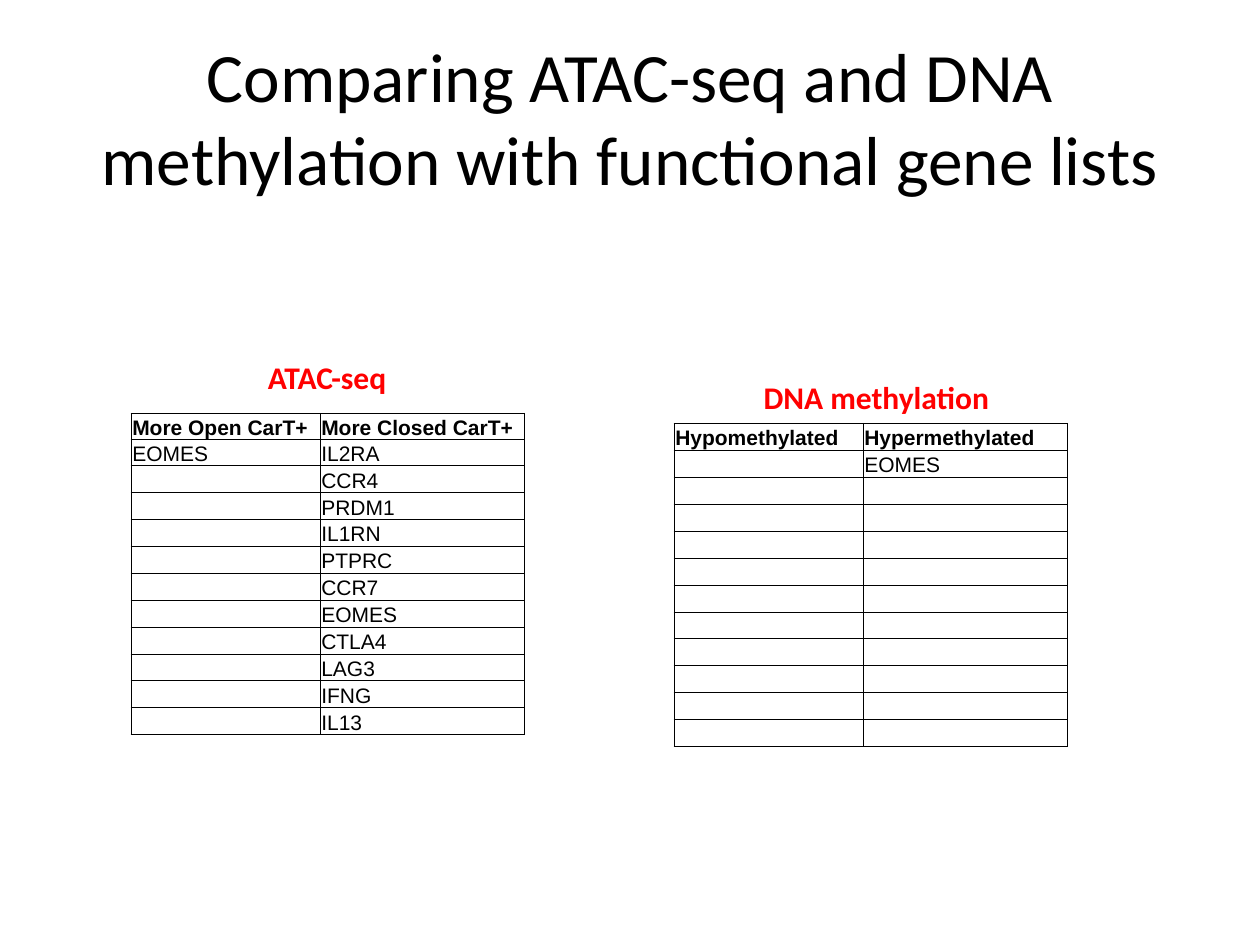
from itertools import zip_longest

from lxml import etree
from pptx import Presentation
from pptx import util as u
from pptx.dml.color import RGBColor
from pptx.enum import text
from pptx.oxml.ns import qn

BLACK, RED = "000000", "FF0000"
ROW_COUNT = 12
COLUMN_WIDTHS = (1.5, 1.62)
OPEN_GENES = ["EOMES"]
CLOSED_GENES = ["IL2RA", "CCR4", "PRDM1", "IL1RN", "PTPRC", "CCR7",
                "EOMES", "CTLA4", "LAG3", "IFNG", "IL13"]


def color(value):
    return RGBColor.from_string(value)


def place(shape, left, top, width, height):
    shape.left, shape.top = u.Inches(left), u.Inches(top)
    shape.width, shape.height = u.Inches(width), u.Inches(height)


def format_font(font, name, size, value, bold=False):
    font.name, font.size, font.bold = name, u.Pt(size), bold
    font.color.rgb = color(value)


def add_title(slide, words):
    title = slide.shapes.title
    place(title, 0.5, 0.3, 9, 1.25)
    frame = title.text_frame
    frame.text = words
    frame.word_wrap = True
    frame.vertical_anchor = text.MSO_ANCHOR.MIDDLE
    para = frame.paragraphs[0]
    para.alignment = text.PP_ALIGN.CENTER
    format_font(para.runs[0].font, "Calibri", 39.6, BLACK)


def add_label(slide, words, left, top, width):
    box = slide.shapes.add_textbox(0, 0, 0, 0)
    place(box, left, top, width, 0.4)
    frame = box.text_frame
    frame.text = words
    frame.word_wrap = True
    frame.auto_size = text.MSO_AUTO_SIZE.SHAPE_TO_FIT_TEXT
    para = frame.paragraphs[0]
    para.alignment = text.PP_ALIGN.CENTER
    format_font(para.runs[0].font, "Calibri", 18, RED, bold=True)


def add_borders(cell):
    """Draw a thin black line on each side; borders precede the fill."""
    properties = cell._tc.get_or_add_tcPr()
    for index, side in enumerate(("a:lnL", "a:lnR", "a:lnT", "a:lnB")):
        line = etree.Element(qn(side), w=str(u.Pt(0.5)))
        fill = etree.SubElement(line, qn("a:solidFill"))
        etree.SubElement(fill, qn("a:srgbClr"), val=BLACK)
        properties.insert(index, line)


def fill_cell(cell, words, bold):
    cell.margin_left = cell.margin_right = cell.margin_top = u.Inches(0.01)
    cell.margin_bottom = 0
    cell.vertical_anchor = text.MSO_ANCHOR.BOTTOM
    cell.fill.background()
    add_borders(cell)
    para = cell.text_frame.paragraphs[0]
    if words:
        para.text = words
        format_font(para.runs[0].font, "Arial", 12, BLACK, bold)
    else:
        # An empty cell keeps the small size, so its row stays low
        etree.SubElement(para._p, qn("a:endParaRPr"), sz="1200")


def add_gene_table(slide, left, top, height, headers, genes):
    frame = slide.shapes.add_table(
        ROW_COUNT, len(headers), u.Inches(left), u.Inches(top),
        u.Inches(sum(COLUMN_WIDTHS)), u.Inches(height))
    table = frame.table
    table.first_row = table.horz_banding = False
    for column, width in zip(table.columns, COLUMN_WIDTHS):
        column.width = u.Inches(width)
    lines = [headers, *zip_longest(*genes, fillvalue="")]
    for index, row in enumerate(table.rows):
        row.height = u.Inches(height / ROW_COUNT)
        words = lines[index] if index < len(lines) else [""] * len(headers)
        for cell, word in zip(row.cells, words):
            fill_cell(cell, word, bold=index == 0)


def main():
    deck = Presentation()
    deck.slide_width, deck.slide_height = u.Inches(10), u.Inches(7.5)
    slide = deck.slides.add_slide(deck.slide_layouts[5])
    add_title(slide, "Comparing ATAC-seq and DNA methylation "
                     "with functional gene lists")

    # Left: chromatin accessibility
    add_gene_table(slide, 1.04, 3.28, 2.5,
                   ("More Open CarT+", "More Closed CarT+"),
                   (OPEN_GENES, CLOSED_GENES))
    add_label(slide, "ATAC-seq", 1.67, 2.79, 1.85)

    # Right: methylation
    add_gene_table(slide, 5.35, 3.36, 2.57,
                   ("Hypomethylated", "Hypermethylated"), ([], ["EOMES"]))
    add_label(slide, "DNA methylation", 5.76, 2.95, 2.39)

    deck.save("out.pptx")


if __name__ == "__main__":
    main()
